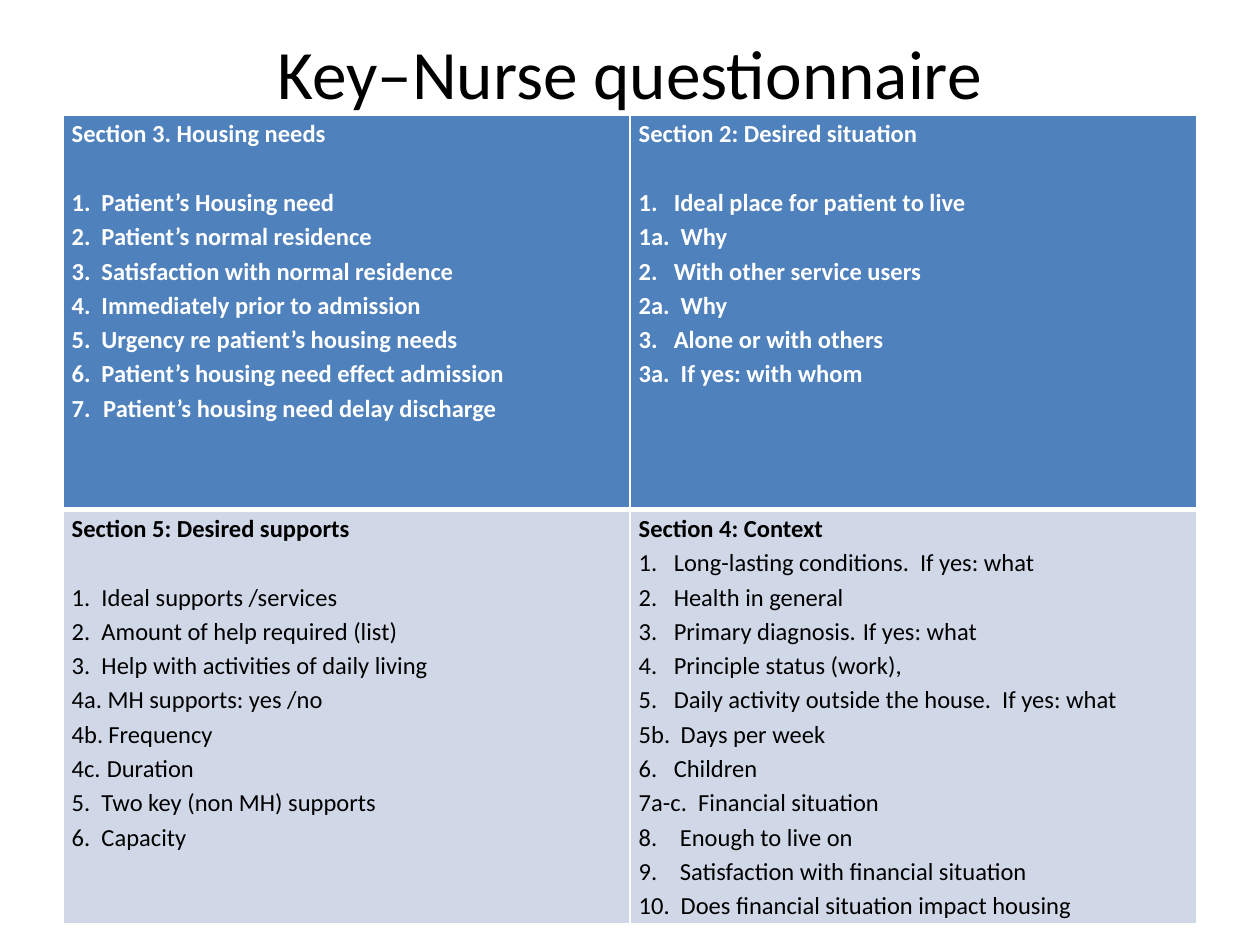
from lxml import etree
from pptx import Presentation
from pptx.dml.color import RGBColor
from pptx.enum.text import MSO_ANCHOR, MSO_AUTO_SIZE, PP_ALIGN
from pptx.oxml.ns import qn
from pptx.util import Pt

MIDDLE, TOP = MSO_ANCHOR.MIDDLE, MSO_ANCHOR.TOP
CENTER, NO_FIT = PP_ALIGN.CENTER, MSO_AUTO_SIZE.NONE
WHITE, BLACK, BLUE, PALE = "FFFFFF", "000000", "4F81BD", "D0D8E8"
LINE_GAP = 19.6  # one text line
ANSWER_TAB = 162  # where the follow-up question starts


def rgb(value):
    return RGBColor.from_string(value)


def add_text(p, text, size, color, bold=False):
    r = p.add_run()
    r.text = text
    style = {"name": "Calibri", "size": Pt(size), "bold": bold}
    for key, value in style.items():
        setattr(r.font, key, value)
    r.font.color.rgb = rgb(color)


# Each section: heading, space after it, items as (hanging indent, label, text)
housing = ("Section 3. Housing needs", LINE_GAP, [
    (17, "1.", "Patient’s Housing need"),
    (17, "2.", "Patient’s normal residence"),
    (17, "3.", "Satisfaction with normal residence"),
    (17, "4.", "Immediately prior to admission"),
    (17, "5.", "Urgency re patient’s housing needs"),
    (17, "6.", "Patient’s housing need effect admission"),
    (18, "7.", "Patient’s housing need delay discharge"),
])
situation = ("Section 2: Desired situation", LINE_GAP, [
    (20, "1.", "Ideal place for patient to live"),
    (24, "1a.", "Why"),
    (20, "2.", "With other service users"),
    (24, "2a.", "Why"),
    (20, "3.", "Alone or with others"),
    (24, "3a.", "If yes: with whom"),
])
supports = ("Section 5: Desired supports", LINE_GAP, [
    (17, "1.", "Ideal supports /services"),
    (17, "2.", "Amount of help required (list)"),
    (17, "3.", "Help with activities of daily living"),
    (20.5, "4a.", "MH supports: yes /no"),
    (21, "4b.", "Frequency"),
    (20, "4c.", "Duration"),
    (17, "5.", "Two key (non MH) supports"),
    (17, "6.", "Capacity"),
])
context = ("Section 4: Context", 0, [
    (20, "1.", "Long-lasting conditions.  If yes: what"),
    (20, "2.", "Health in general"),
    (20, "3.", "Primary diagnosis.\tIf yes: what"),
    (20, "4.", "Principle status (work),"),
    (20, "5.", "Daily activity outside the house.  If yes: what"),
    (24, "5b.", "Days per week"),
    (20, "6.", "Children"),
    (34, "7a-c.", "Financial situation"),
    (23.5, "8.", "Enough to live on"),
    (23.5, "9.", "Satisfaction with financial situation"),
    (24, "10.", "Does financial situation impact housing"),
])

# Row: height, fill, text colour, bold items, bottom border width, sections
rows = [
    (225.5, BLUE, WHITE, True, 3, [housing, situation]),
    (236.5, PALE, BLACK, False, 1, [supports, context]),
]

prs = Presentation()
prs.slide_width, prs.slide_height = Pt(720), Pt(540)
s = prs.slides.add_slide(prs.slide_layouts[6])

# Title
tf = s.shapes.add_textbox(Pt(36), Pt(21.6), Pt(648), Pt(38.4)).text_frame
frame = {"word_wrap": True, "auto_size": NO_FIT, "vertical_anchor": MIDDLE,
         "margin_top": 0, "margin_bottom": 0}
for key, value in frame.items():
    setattr(tf, key, value)
tf.paragraphs[0].alignment = CENTER
add_text(tf.paragraphs[0], "Key–Nurse questionnaire", 39.6, BLACK)

# Table of sections
table = s.shapes.add_table(2, 2, Pt(36), Pt(65.8), Pt(648), Pt(462)).table
cell_format = {"margin_left": Pt(5), "margin_right": Pt(5), "margin_top": 0,
               "margin_bottom": 0, "vertical_anchor": TOP}
for i, (height, fill, color, bold, bottom, sections) in enumerate(rows):
    table.rows[i].height = Pt(height)
    for j, (heading, gap, items) in enumerate(sections):
        cell = table.cell(i, j)
        for key, value in cell_format.items():
            setattr(cell, key, value)

        # Heading and numbered questions
        p = cell.text_frame.paragraphs[0]
        p.line_spacing = 1.15
        p.space_after = Pt(gap)
        add_text(p, heading, 14, color, True)
        for indent, label, text in items:
            p = cell.text_frame.add_paragraph()
            p.line_spacing = 1.15
            add_text(p, label + "\t" + text, 14, color, bold)
            pPr = p._p.get_or_add_pPr()
            pPr.set("marL", str(Pt(indent)))
            pPr.set("indent", str(-Pt(indent)))
            stops = etree.SubElement(pPr, qn("a:tabLst"))
            for stop in [indent] + [ANSWER_TAB] * text.count("\t"):
                etree.SubElement(stops, qn("a:tab"), pos=str(Pt(stop)), algn="l")

        # White borders, heavier under the first row, then the fill
        tcPr = cell._tc.get_or_add_tcPr()
        top = rows[i - 1][4] if i else 1
        for side, width in (("L", 1), ("R", 1), ("T", top), ("B", bottom)):
            ln = etree.SubElement(tcPr, qn("a:ln" + side), w=str(Pt(width)))
            solid = etree.SubElement(ln, qn("a:solidFill"))
            etree.SubElement(solid, qn("a:srgbClr"), val=WHITE)
        cell.fill.solid()
        cell.fill.fore_color.rgb = rgb(fill)

prs.save("out.pptx")
